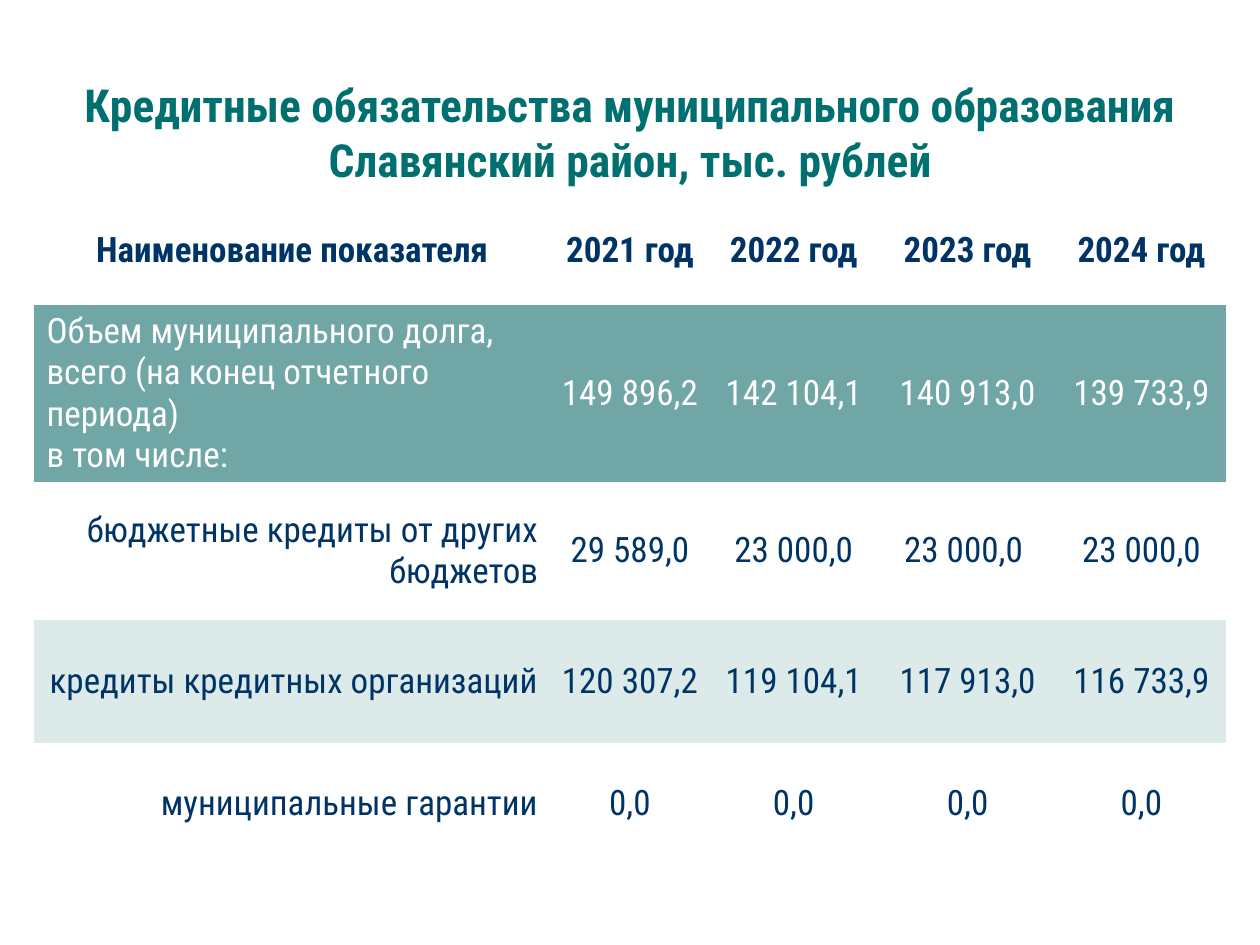
"""Build a slide with a table of municipal credit obligations."""
from pptx import Presentation
from pptx.dml.color import RGBColor
from pptx.enum.text import MSO_ANCHOR, PP_ALIGN
from pptx.util import Inches, Pt

NAVY = RGBColor(0x00, 0x33, 0x66)
GREEN = RGBColor(0x00, 0x6F, 0x6F)
TEAL = RGBColor(0x71, 0xA6, 0xA6)
PALE = RGBColor(0xDD, 0xEA, 0xEA)
WHITE = RGBColor(0xFF, 0xFF, 0xFF)

NO_GRID_STYLE = "{2D5ABB26-0587-4C30-8999-92F81FD0307C}"
TITLE = "Кредитные обязательства муниципального образования Славянский район, тыс. рублей"
COL_WIDTHS = [4.1, 1.26, 1.34, 1.42, 1.34]
ROW_HEIGHTS = [0.87, 1.29, 1.09, 0.98, 0.96]
ROWS = [
    ["Наименование показателя", "2021 год", "2022 год", "2023 год", "2024 год"],
    ["Объем муниципального долга, всего (на конец отчетного периода)\nв том числе:",
     "149 896,2", "142 104,1", "140 913,0", "139 733,9"],
    ["бюджетные кредиты от других бюджетов",
     "29 589,0", "23 000,0", "23 000,0 ", "23 000,0"],
    ["кредиты кредитных организаций",
     "120 307,2", "119 104,1", "117 913,0", "116 733,9"],
    ["муниципальные гарантии", "0,0", "0,0", "0,0", "0,0"],
]
ROW_STYLES = [
    (WHITE, NAVY, True, PP_ALIGN.CENTER),
    (TEAL, WHITE, False, PP_ALIGN.LEFT),
    (WHITE, NAVY, False, PP_ALIGN.RIGHT),
    (PALE, NAVY, False, PP_ALIGN.RIGHT),
    (WHITE, NAVY, False, PP_ALIGN.RIGHT),
]


class SlideBuilder:
    """Holds the text style and the current slide."""

    font = "Roboto Condensed"

    def __init__(self, slide):
        self.slide = slide

    def add_text(self, tf, text, size, color, bold, align):
        for i, line in enumerate(text.split("\n")):
            p = tf.add_paragraph() if i else tf.paragraphs[0]
            p.alignment = align
            r = p.add_run()
            r.text = line
            r.font.name = self.font
            r.font.size = Pt(size)
            r.font.bold = bold
            r.font.color.rgb = color

    def add_title(self, text, left, top, width, height):
        sp = self.slide.shapes.title
        sp.left, sp.top = Inches(left), Inches(top)
        sp.width, sp.height = Inches(width), Inches(height)
        tf = sp.text_frame
        tf.word_wrap = True
        tf.vertical_anchor = MSO_ANCHOR.MIDDLE
        self.add_text(tf, text, 26, GREEN, True, PP_ALIGN.CENTER)

    def fill_cell(self, cell, text, style, is_label, is_header):
        fill, color, bold, label_align = style
        cell.fill.solid()
        cell.fill.fore_color.rgb = fill
        cell.vertical_anchor = MSO_ANCHOR.MIDDLE
        roomy = is_label or is_header
        cell.margin_left = cell.margin_right = Inches(0.1 if roomy else 0.02)
        cell.margin_top = cell.margin_bottom = Inches(0.05 if roomy else 0)
        align = label_align if is_label else PP_ALIGN.CENTER
        self.add_text(cell.text_frame, text, 20, color, bold, align)

    def add_table(self, rows, left, top):
        frame = self.slide.shapes.add_table(
            len(rows), len(COL_WIDTHS), Inches(left), Inches(top),
            Inches(sum(COL_WIDTHS)), Inches(sum(ROW_HEIGHTS)))
        table = frame.table
        table.first_row = table.horz_banding = False
        table._tbl.tblPr[0].text = NO_GRID_STYLE
        for col, width in zip(table.columns, COL_WIDTHS):
            col.width = Inches(width)
        for row, height in zip(table.rows, ROW_HEIGHTS):
            row.height = Inches(height)
        for i, (texts, style) in enumerate(zip(rows, ROW_STYLES)):
            for j, text in enumerate(texts):
                self.fill_cell(table.cell(i, j), text, style, j == 0, i == 0)


def main():
    prs = Presentation()
    prs.slide_width, prs.slide_height = Inches(10), Inches(7.5)
    s = SlideBuilder(prs.slides.add_slide(prs.slide_layouts[5]))
    s.add_title(TITLE, 0.51, 0.37, 8.99, 1.35)
    s.add_table(ROWS, 0.27, 1.55)
    prs.save("out.pptx")


if __name__ == "__main__":
    main()
